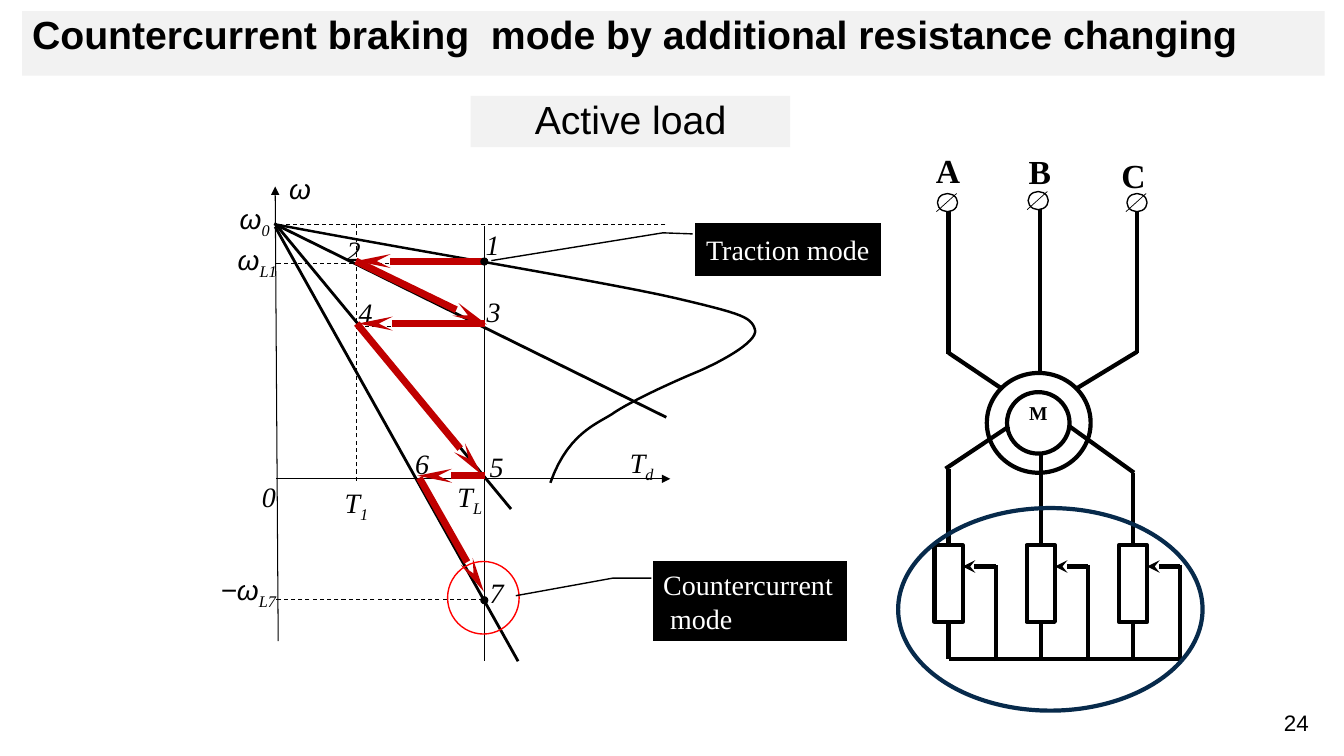
from lxml.etree import SubElement
from pptx import Presentation
from pptx.dml.color import RGBColor
from pptx.enum.dml import MSO_LINE
from pptx.enum.shapes import MSO_CONNECTOR, MSO_SHAPE
from pptx.enum.text import MSO_ANCHOR, PP_ALIGN
from pptx.oxml.ns import qn
from pptx.util import Inches, Pt

CELL = Inches(0.1)
SERIF, SANS = "Times New Roman", "Arial"
BLACK, WHITE, GREY = "000000", "FFFFFF", "F2F2F2"
RED, DARK_RED, NAVY = "FF0000", "C00000", "072A4B"
LEFT, CENTER = PP_ALIGN.LEFT, PP_ALIGN.CENTER
TOP, MIDDLE = MSO_ANCHOR.TOP, MSO_ANCHOR.MIDDLE


def cells(*counts):
    """Turn counts of grid columns or rows into lengths."""
    return [round(count * CELL) for count in counts]


def paint(fill, color):
    """Make a fill solid in a hex colour, or empty for None."""
    if color is None:
        fill.background()
    else:
        fill.solid()
        fill.fore_color.rgb = RGBColor.from_string(color)


deck = Presentation()
deck.slide_width, deck.slide_height = cells(133.33, 75)
page = deck.slides.add_slide(deck.slide_layouts[6])
shapes = page.shapes

# Natural torque curve: cubic segments, each starting where the last one ended
start = (27.5, 22.3)
segments = [
    ((40.7, 24.8), (60.2, 28), (67.1, 29.6)),
    ((73.9, 31.2), (74.5, 31.5), (74.9, 32.7)),
    ((75.2, 33.8), (72.1, 35.6), (69.4, 36.8)),
    ((66.7, 37.9), (62.2, 40), (60.7, 41.1)),
    ((59.1, 42.1), (56.3, 43.1), (54.6, 47.9)),
]
STEPS = 14
points = []
corner = start
for first, second, end in segments:
    for step in range(1, STEPS + 1):
        t = step / STEPS
        points.append(cells(*(
            (1 - t) ** 3 * a + 3 * t * (1 - t) ** 2 * b + 3 * t ** 2 * (1 - t) * c + t ** 3 * d
            for a, b, c, d in zip(corner, first, second, end))))
    corner = end
builder = shapes.build_freeform(*cells(*start))
builder.add_line_segments(points, close=False)
curve = builder.convert_to_shape()
curve.shadow.inherit = False
paint(curve.fill, None)
paint(curve.line.fill, BLACK)
curve.line.width = Pt(1.75)

# Diagram labels: left, top, symbol, subscript
labels = [
    (61.5, 43.1, "T", "d"), (33.2, 47.1, "T", "1"), (44.4, 46.5, "T", "L"),
    (27.7, 16, "ω", ""), (22.8, 18.9, "ω", "0"), (22.6, 23, "ω", "L1"), (20.9, 55.7, "−ω", "L7"),
    (25, 46.6, "0", ""), (47.2, 21.6, "1", ""), (33.4, 22.2, "2", ""), (47.3, 28.2, "3", ""),
    (34.6, 28.3, "4", ""), (47.6, 43.6, "5", ""), (40.2, 43.3, "6", ""), (47.6, 56.1, "7", ""),
]
for left, top, symbol, subscript in labels:
    box = shapes.add_textbox(*cells(left, top, 7.5, 5.8))
    box.text_frame.word_wrap = True
    para = box.text_frame.paragraphs[0]
    para.line_spacing = 1.15
    para.font.size = Pt(20)
    para.font.italic = True
    paint(para.font.fill, BLACK)
    span = para.add_run()
    span.text = symbol
    span.font.name = SANS if "ω" in symbol else SERIF
    if subscript:
        span = para.add_run()
        span.text = subscript
        span.font.name = SERIF
        span._r.get_or_add_rPr().set("baseline", "-25000")

# Lines: start column and row, end column and row
axes = [(27.6, 63.6, 27.3, 18.5), (27.4, 47.5, 66.5, 47.5)]
guides = [
    (66, 22.3, 27.6, 22.3), (35.5, 32.4, 48, 32.4), (47.9, 26.1, 27.4, 26.1),
    (35.4, 47.7, 35.4, 22.1), (47.9, 59.5, 27.4, 59.5),
]
characteristics = [(27.2, 22.2, 66.1, 41.4), (27.3, 22.2, 50.7, 50.5), (27.3, 22.5, 51.4, 65.6)]
braking = [
    (47.9, 25.9, 35.3, 25.9), (35.3, 25.9, 48.3, 32.2), (48.1, 32.1, 35.5, 32.1),
    (35.4, 32.1, 47.8, 47.1), (48.1, 47.2, 41.4, 47.2), (41.6, 47.4, 48, 58.7),
]
terminals = [(94, 20.1), (103, 19.9), (112.8, 20.1)]
phases = [94.1 + 9.15 * index for index in range(3)]
wires = [
    (94.1, 20.8, 94.1, 35.1), (103.2, 20.7, 103.2, 37), (112.8, 20.8, 112.8, 35),
    (94.1, 35, 99.3, 38.5), (112.8, 34.9, 106.7, 38.6),
    (100.1, 42.3, 93.8, 46.5), (106.1, 42.3, 112.5, 46.9),
    (117.2, 65.4, 94.1, 65.4),
]
wires += [(x, y, x, 65.4) for x, y in zip(phases, (46.5, 45, 46.9))]
wires += [(x + 4.7, 65.6, x + 4.7, 56.1) for x in phases]
sliders = [(x + 4.7, 56.2, x + 1.4, 56.2) for x in phases]
slashes = [(x + 0.9, y - 0.9, x - 1.1, y + 0.9) for x, y in terminals]

# Lines to draw, colour, width, dashed, arrowhead (type, width, length)
load_line = [(48.1, 22.4, 48.1, 65.6)]
line_groups = [
    (axes, BLACK, 0.75, False, ("triangle", "med", "med")),
    (load_line, BLACK, 0.75, False, None),
    (guides, BLACK, 0.75, True, None),
    (characteristics, BLACK, 2, False, None),
    (braking, DARK_RED, 5, False, ("stealth", "sm", "lg")),
    (wires, BLACK, 3, False, None),
    (sliders, BLACK, 3, False, ("stealth", "med", "med")),
]

# Outlines: kind, place, fill, line colour, line width
OVAL, RECTANGLE = MSO_SHAPE.OVAL, MSO_SHAPE.RECTANGLE
outlines = [(OVAL, (47.7, y, 0.7, 0.7), BLACK, BLACK, 0.75) for y in (25.6, 59.2)]
outlines += [(RECTANGLE, (x - 1.4, 54.1, 2.8, 7.6), WHITE, BLACK, 3) for x in phases]
outlines += [(OVAL, (x - 1, y - 0.9, 2, 1.8), WHITE, BLACK, 1) for x, y in terminals]
outlines += [
    (OVAL, (44.4, 55.7, 7.1, 7.2), None, RED, 1),
    (OVAL, (97.9, 37, 10.3, 9.9), None, BLACK, 3),
    (OVAL, (99.9, 38.9, 6.2, 6.1), None, BLACK, 3),
    (OVAL, (89.1, 50.4, 30.2, 20.1), None, NAVY, 3),
]

slash_group = (slashes, BLACK, 0.5, False, None)
for group in line_groups + [slash_group]:
    lines, color, width, dashed, arrow = group
    if group is slash_group:
        for kind, place, fill, outline, thickness in outlines:
            shape = shapes.add_shape(kind, *cells(*place))
            shape.shadow.inherit = False
            paint(shape.fill, fill)
            paint(shape.line.fill, outline)
            shape.line.width = Pt(thickness)
    for ends in lines:
        line = shapes.add_connector(MSO_CONNECTOR.STRAIGHT, *cells(*ends))
        paint(line.line.fill, color)
        line.line.width = Pt(width)
        if dashed:
            line.line.dash_style = MSO_LINE.DASH
        properties = line._element.spPr
        if arrow:
            tail = SubElement(properties.find(qn("a:ln")), qn("a:tailEnd"))
            for name, value in zip(("type", "w", "len"), arrow):
                tail.set(name, value)
        SubElement(properties, qn("a:effectLst"))

# Captions: kind, place, fill, paragraphs, size, font, bold, colour, alignment, anchor, spacing
CALLOUT = MSO_SHAPE.LINE_CALLOUT_2_NO_BORDER
captions = [
    (RECTANGLE, (2.2, 1.1, 129.2, 6.4), GREY,
     ["Countercurrent braking  mode by additional resistance changing"],
     28, SANS, True, BLACK, LEFT, TOP, 0.9),
    (RECTANGLE, (46.7, 9.5, 31.7, 5.1), GREY, ["Active load"],
     28, SANS, False, BLACK, CENTER, TOP, 0.9),
    (CALLOUT, (64.8, 55.7, 19.2, 7.9), BLACK, ["Countercurrent", "mode"],
     20, SERIF, False, WHITE, LEFT, MIDDLE, 1),
    (CALLOUT, (68.9, 22.1, 18.5, 5.3), BLACK, ["Traction mode"],
     20, SERIF, False, WHITE, CENTER, MIDDLE, 1),
    (None, (99.9, 39.3, 6.2, 4.5), None, ["M"], 14, SERIF, True, BLACK, CENTER, TOP, 1),
    (None, (125.4, 69.9, 6.4, 3.7), None, ["24"], 16, SANS, False, BLACK, CENTER, TOP, 1),
]
captions += [
    (None, (left, top, 4.5, 5), None, [phase], 24, SERIF, True, BLACK, CENTER, TOP, 1)
    for phase, left, top in (("A", 91.8, 14.4), ("B", 100.9, 14.5), ("C", 110.2, 14.9))
]
leaders = {
    "Countercurrent": (0.21, -0.01, 0.21, -0.21, 0.43, -0.71),
    "Traction mode": (0.21, -0.01, 0.19, -0.17, 0.71, -1.09),
}
for kind, place, fill, texts, size, font, bold, color, align, anchor, spacing in captions:
    box = shapes.add_shape(kind, *cells(*place)) if kind else shapes.add_textbox(*cells(*place))
    if kind:
        box.shadow.inherit = False
        paint(box.line.fill, BLACK if kind == CALLOUT else None)
        box.line.width = Pt(1)
    paint(box.fill, fill)
    for index, share in enumerate(leaders.get(texts[0], ())):
        box.adjustments[index] = share
    frame = box.text_frame
    frame.word_wrap = True
    frame.vertical_anchor = anchor
    for index, text in enumerate(texts):
        para = frame.add_paragraph() if index else frame.paragraphs[0]
        para.text = text
        para.alignment = align
        para.line_spacing = spacing
        if index:
            para._p.get_or_add_pPr().set("marL", str(cells(0.7)[0]))
        para.font.size = Pt(size)
        para.font.name = font
        para.font.bold = bold
        paint(para.font.fill, color)

deck.save("out.pptx")
